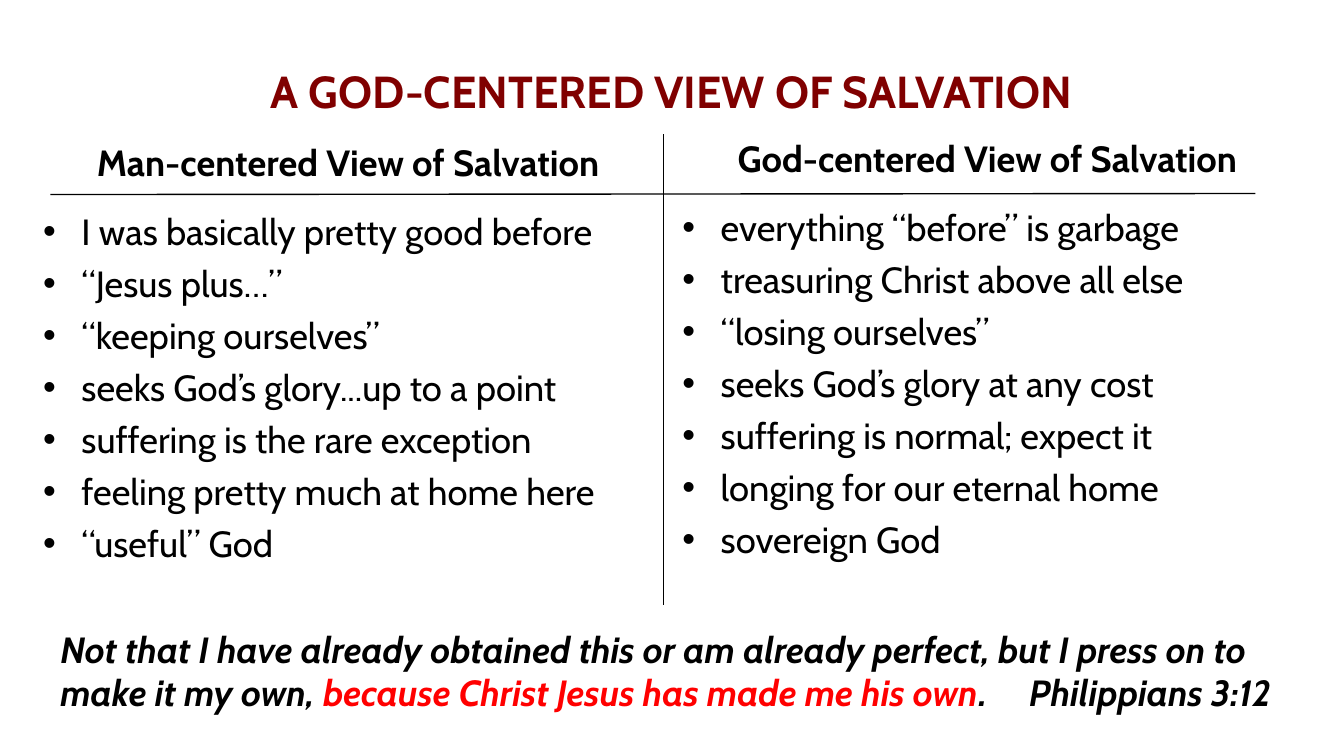
"""Builds a slide that contrasts two views of salvation, with a closing verse."""
from lxml import etree
from pptx import Presentation, util as u
from pptx.dml.color import RGBColor
from pptx.enum import shapes, text
from pptx.oxml.ns import qn

PX = 9144
FONT = "Cabin"
COLORS = {"black": "000000", "maroon": "800000", "red": "FF0000"}
MAN_VIEW = ("Man-centered View of Salvation", [
    "I was basically pretty good before",
    "“Jesus plus…”",
    "“keeping ourselves”",
    "seeks God’s glory...up to a point",
    "suffering is the rare exception",
    "feeling pretty much at home here",
    "“useful” God",
])
GOD_VIEW = ("God-centered View of Salvation", [
    "everything “before” is garbage",
    "treasuring Christ above all else",
    "“losing ourselves”",
    "seeks God’s glory at any cost",
    "suffering is normal; expect it",
    "longing for our eternal home",
    "sovereign God",
])
VERSE = [
    ("Not that I have already obtained this or am already perfect, "
     "but I press on to make it my own, ", "black"),
    ("because Christ Jesus has made me his own", "red"),
    (".\tPhilippians 3:12", "black"),
]


def px(n):
    return u.Emu(n * PX)


def style(font, size=26, color="black", bold=True, italic=False):
    font.name, font.size = FONT, u.Pt(size)
    font.bold, font.italic = bold, italic
    font.color.rgb = RGBColor.from_string(COLORS[color])


def add_text(s, box):
    tf = s.shapes.add_textbox(*map(px, box)).text_frame
    tf.word_wrap = True
    return tf


def add_line(s, x1, y1, x2, y2):
    ln = s.shapes.add_connector(shapes.MSO_CONNECTOR.STRAIGHT, *map(px, (x1, y1, x2, y2)))
    ln.line.color.rgb = RGBColor.from_string(COLORS["black"])
    ln.line.width = u.Pt(1)
    etree.SubElement(ln.element.spPr, qn("a:effectLst"))


def add_title(s, box, title):
    tf = add_text(s, box)
    tf.vertical_anchor = text.MSO_ANCHOR.MIDDLE
    p = tf.paragraphs[0]
    p.text = title
    p.alignment = text.PP_ALIGN.CENTER
    style(p.runs[0].font, 32, "maroon")


def add_view(s, box, heading, points):
    tf = add_text(s, box)
    p = tf.paragraphs[0]
    p.text = heading
    p.alignment = text.PP_ALIGN.CENTER
    style(p.runs[0].font)
    for i, point in enumerate(points):
        p = tf.add_paragraph()
        p.text = point
        pPr = p._p.get_or_add_pPr()
        pPr.set("marL", str(px(38)))
        pPr.set("indent", str(px(-38)))
        etree.SubElement(pPr, qn("a:buFont"), typeface="Arial")
        etree.SubElement(pPr, qn("a:buChar"), char="•")
        p.space_before = u.Pt(6 if i else 18)
        style(p.runs[0].font, bold=False)


def add_rules(s, box):
    x, y, w, h = box
    add_line(s, x, y + 60, x + w, y + 59)
    add_line(s, x + 608, y, x + 608, y + h)


def add_verse(s, box, parts):
    p = add_text(s, box).paragraphs[0]
    tabs = etree.SubElement(p._p.get_or_add_pPr(), qn("a:tabLst"))
    etree.SubElement(tabs, qn("a:tab"), pos=str(px(961)), algn="l")
    for words, color in parts:
        r = p.add_run()
        r.text = words
        style(r.font, color=color, italic=True)


def main():
    prs = Presentation()
    prs.slide_width, prs.slide_height = px(1333), px(750)
    s = prs.slides.add_slide(prs.slide_layouts[6])
    add_title(s, (33, 50, 1267, 80), "A GOD-CENTERED VIEW OF SALVATION")
    add_view(s, (33, 134, 625, 618), *MAN_VIEW)
    add_view(s, (667, 130, 625, 618), *GOD_VIEW)
    add_rules(s, (50, 133, 1195, 467))
    add_verse(s, (50, 617, 1244, 98), VERSE)
    prs.save("out.pptx")


if __name__ == "__main__":
    main()
